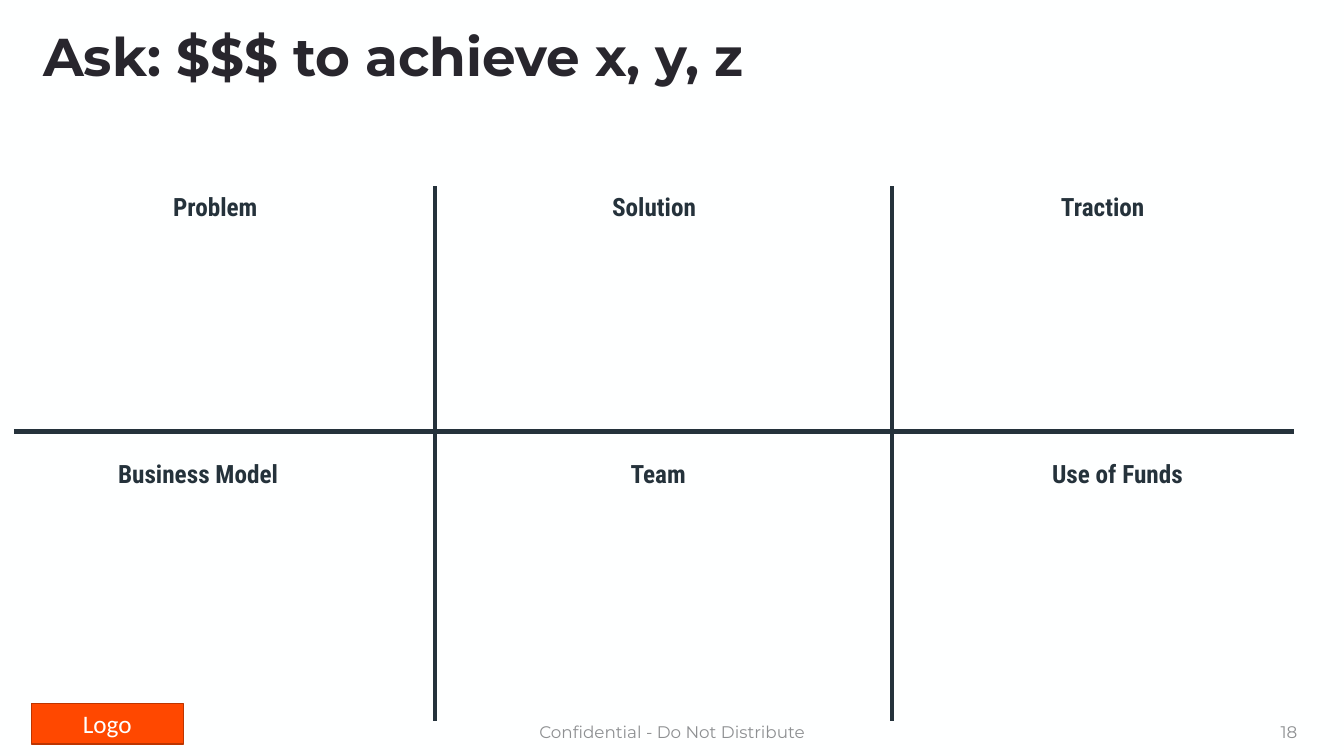
from lxml import etree
from pptx import Presentation
from pptx import util as u
from pptx.dml.color import RGBColor
from pptx.enum import shapes, text
from pptx.oxml.ns import qn

COLORS = {
    "background": "FEFFFF",
    "title": "28262D",
    "ink": "25323B",
    "footer": "8E9092",
    "logo": "FF4800",
    "logo_edge": "BD3500",
}
FORMATS = {
    "title": {"size": u.Pt(38), "name": "Montserrat", "bold": True},
    "ink": {"size": u.Pt(18), "name": "Roboto Condensed", "bold": True},
    "footer": {"size": u.Pt(12), "name": "Montserrat"},
    "background": {"size": u.Pt(18), "name": "Calibri"},
}
LEFT, CENTER, RIGHT = text.PP_ALIGN.LEFT, text.PP_ALIGN.CENTER, text.PP_ALIGN.RIGHT
TOP, MIDDLE = text.MSO_ANCHOR.TOP, text.MSO_ANCHOR.MIDDLE


def color(name):
    return RGBColor.from_string(COLORS[name])


def write(sp, words, style, align, anchor):
    tf = sp.text_frame
    tf.word_wrap = True
    tf.vertical_anchor = anchor
    p = tf.paragraphs[0]
    p.alignment = align
    r = p.add_run()
    r.text = words
    for key, value in FORMATS[style].items():
        setattr(r.font, key, value)
    r.font.color.rgb = color(style)
    return p


prs = Presentation()
prs.slide_width, prs.slide_height = u.Pt(960), u.Pt(540)
s = prs.slides.add_slide(prs.slide_layouts[6])
s.background.fill.solid()
s.background.fill.fore_color.rgb = color("background")

logo = s.shapes.add_shape(
    shapes.MSO_SHAPE.RECTANGLE, u.Pt(22.3), u.Pt(502.6), u.Pt(108.7), u.Pt(28.8)
)
logo.shadow.inherit = False
logo.fill.solid()
logo.fill.fore_color.rgb = color("logo")
logo.line.color.rgb = color("logo_edge")
logo.line.width = u.Pt(1)
write(logo, "Logo", "background", CENTER, MIDDLE)

title = s.shapes.add_textbox(u.Pt(23.8), u.Pt(18), u.Pt(909.4), u.Pt(48.2))
write(title, "Ask: $$$ to achieve x, y, z", "title", LEFT, MIDDLE).line_spacing = 0.9

footers = [
    ("Confidential - Do Not Distribute", 318.2, 324, CENTER),
    ("18", 717.8, 216, RIGHT),
]
for words, x, width, align in footers:
    sp = s.shapes.add_textbox(u.Pt(x), u.Pt(508.3), u.Pt(width), u.Pt(28.8))
    write(sp, words, "footer", align, MIDDLE)

dividers = [
    (10, 308.2, 924.5, 308.2),
    (311, 133.2, 311, 514.8),
    (637.2, 133.2, 637.2, 514.8),
]
for ends in dividers:
    line = s.shapes.add_connector(shapes.MSO_CONNECTOR.STRAIGHT, *map(u.Pt, ends))
    line.line.color.rgb = color("ink")
    line.line.width = u.Pt(3)
    etree.SubElement(line._element.spPr, qn("a:effectLst"))

rows = {
    133.2: [("Problem", 106.6, 94.3), ("Solution", 426.2, 82.1), ("Traction", 746.6, 82.1)],
    324: [("Business Model", 67, 149), ("Team", 429.1, 82.1), ("Use of Funds", 733, 130.3)],
}
for y, labels in rows.items():
    for words, x, width in labels:
        sp = s.shapes.add_textbox(u.Pt(x), u.Pt(y), u.Pt(width), u.Pt(28.8))
        write(sp, words, "ink", CENTER, TOP)
        sp.text_frame.auto_size = text.MSO_AUTO_SIZE.SHAPE_TO_FIT_TEXT

prs.save("out.pptx")
